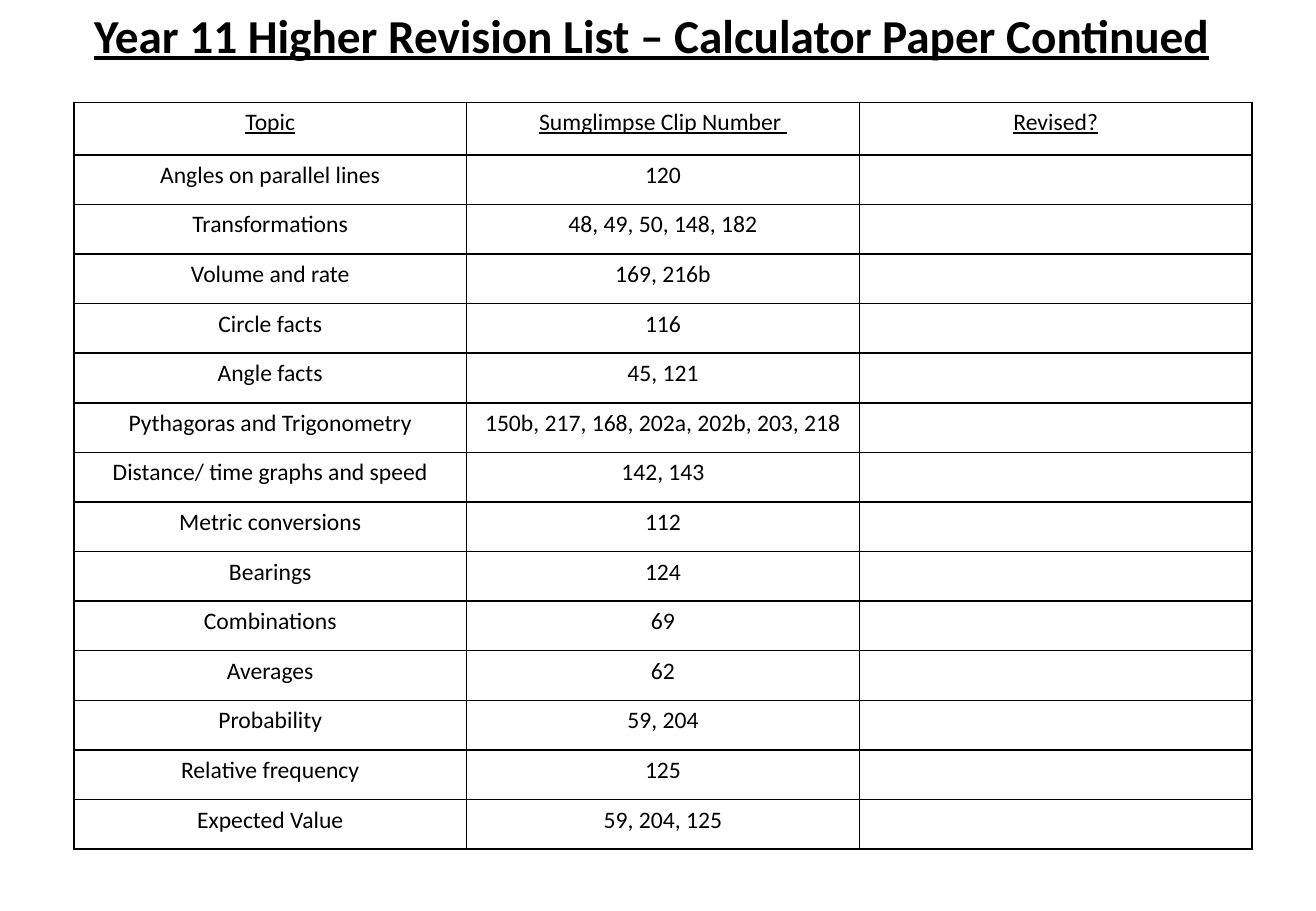
from lxml import etree
from pptx import Presentation
from pptx import util as u
from pptx.dml.color import RGBColor
from pptx.enum import text
from pptx.oxml import ns

PX = 7620  # EMU per px, 120 px to the inch
BLACK = "000000"

TOPICS = [
    ("Angles on parallel lines", "120"),
    ("Transformations", "48, 49, 50, 148, 182"),
    ("Volume and rate", "169, 216b"),
    ("Circle facts", "116"),
    ("Angle facts", "45, 121"),
    ("Pythagoras and Trigonometry", "150b, 217, 168, 202a, 202b, 203, 218"),
    ("Distance/ time graphs and speed", "142, 143"),
    ("Metric conversions", "112"),
    ("Bearings", "124"),
    ("Combinations", "69"),
    ("Averages", "62"),
    ("Probability", "59, 204"),
    ("Relative frequency", "125"),
    ("Expected Value", "59, 204, 125"),
]
ROWS = [("Topic", "Sumglimpse Clip Number ", "Revised?")]
ROWS += [(topic, clips, "") for topic, clips in TOPICS]


def write(para, words, size, bold=False, underline=False):
    """Add one centred black Calibri run to the paragraph."""
    para.alignment = text.PP_ALIGN.CENTER
    span = para.add_run()
    span.text = words
    span.font.name = "Calibri"
    span.font.size = u.Pt(size)
    span.font.bold = bold
    span.font.underline = underline
    span.font.color.rgb = RGBColor.from_string(BLACK)


def add_borders(cell):
    """Draw a 1 pt line on all four sides of a cell."""
    props = cell._tc.get_or_add_tcPr()
    for place, side in enumerate(("lnL", "lnR", "lnT", "lnB")):
        line = etree.Element(ns.qn(f"a:{side}"), w=str(u.Pt(1)))
        fill = etree.SubElement(line, ns.qn("a:solidFill"))
        etree.SubElement(fill, ns.qn("a:srgbClr"), val=BLACK)
        props.insert(place, line)


deck = Presentation()
deck.slide_width, deck.slide_height = 1300 * PX, 900 * PX
page = deck.slides.add_slide(deck.slide_layouts[6])

# Revision table
frame = page.shapes.add_table(len(ROWS), 3, 73 * PX, 101 * PX, 1164 * PX, 738 * PX)
table = frame.table
table.first_row = table.horz_banding = False
for column in table.columns:
    column.width = 388 * PX
for r, row in enumerate(ROWS):
    table.rows[r].height = (52 if r == 0 else 49) * PX
    for c, words in enumerate(row):
        cell = table.cell(r, c)
        cell.fill.background()
        add_borders(cell)
        if words:
            write(cell.text_frame.paragraphs[0], words, 14, underline=r == 0)

# Title
title = page.shapes.add_textbox(61 * PX, 0, 1165 * PX, 68 * PX)
title.text_frame.word_wrap = True
title.text_frame.auto_size = text.MSO_AUTO_SIZE.SHAPE_TO_FIT_TEXT
write(title.text_frame.paragraphs[0],
      "Year 11 Higher Revision List – Calculator Paper Continued",
      28, bold=True, underline=True)

deck.save("out.pptx")
